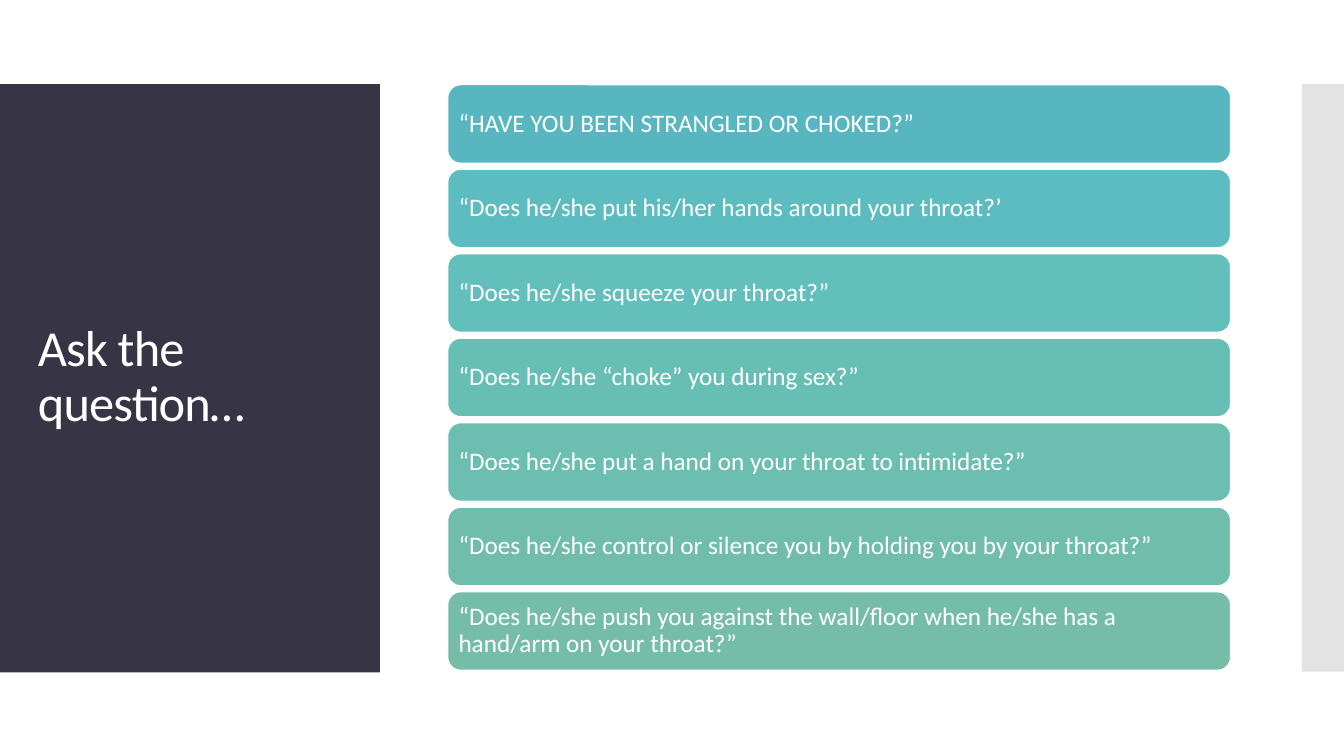
import pptx
import pptx.util
import pptx.dml.color
import pptx.enum.shapes
import pptx.enum.text
import pptx.oxml
import pptx.oxml.ns

Pt = pptx.util.Pt
SHAPES = pptx.enum.shapes.MSO_SHAPE

TITLE = "Ask the question…"
QUESTIONS = [
    ("“HAVE YOU BEEN STRANGLED OR CHOKED?”", "58B6C0"),
    ("“Does he/she put his/her hands around your throat?’", "5DBCBF"),
    ("“Does he/she squeeze your throat?”", "62BFBB"),
    ("“Does he/she “choke” you during sex?”", "67BEB5"),
    ("“Does he/she put a hand on your throat to intimidate?”", "6CBEB0"),
    ("“Does he/she control or silence you by holding you by your throat?”", "70BDAB"),
    ("“Does he/she push you against the wall/floor when he/she has a "
     "hand/arm on your throat?”", "75BDA7"),
]
WIDTH, HEIGHT = 960, 540
PANEL_TOP, PANEL_WIDTH, PANEL_HEIGHT = 60, 271.3, 420.3
STRIP_LEFT, STRIP_HEIGHT = 930, 419.8
BAR_LEFT, BAR_TOP, BAR_WIDTH, BAR_HEIGHT = 319.8, 60.5, 559.2, 56.1
BAR_PITCH = 60.36


def color(value):
    return pptx.dml.color.RGBColor.from_string(value)


def add_block(slide, kind, left, top, width, height, fill, line=None, alpha=None):
    s = slide.shapes.add_shape(kind, Pt(left), Pt(top), Pt(width), Pt(height))
    s.shadow.inherit = False
    s.fill.solid()
    s.fill.fore_color.rgb = color(fill)
    if line:
        s.line.color.rgb = color(line)
        s.line.width = Pt(0.85)
    else:
        s.line.fill.background()
    if alpha:
        clr = s.fill._xPr.find(".//" + pptx.oxml.ns.qn("a:srgbClr"))
        node = pptx.oxml.parse_xml(
            f'<a:alpha {pptx.oxml.ns.nsdecls("a")} val="{alpha * 1000}"/>')
        clr.append(node)
    return s


def write(s, text, size=18, inset_x=5, inset_y=5, spacing=None):
    tf = s.text_frame
    tf.word_wrap = True
    tf.vertical_anchor = pptx.enum.text.MSO_ANCHOR.MIDDLE
    tf.margin_left = tf.margin_right = Pt(inset_x)
    tf.margin_top = tf.margin_bottom = Pt(inset_y)
    p = tf.paragraphs[0]
    p.alignment = pptx.enum.text.PP_ALIGN.LEFT
    p.line_spacing = 0.9
    r = p.add_run()
    r.text = text
    r.font.size = Pt(size)
    r.font.name = "Calibri"
    r.font.color.rgb = color("FFFFFF")
    if spacing:
        r.font._element.set("spc", str(round(spacing * 100)))


def main():
    prs = pptx.Presentation()
    prs.slide_width, prs.slide_height = Pt(WIDTH), Pt(HEIGHT)
    slide = prs.slides.add_slide(prs.slide_layouts[6])

    add_block(slide, SHAPES.RECTANGLE, STRIP_LEFT, PANEL_TOP,
              WIDTH - STRIP_LEFT, STRIP_HEIGHT, "C8C8C8", alpha=50)
    add_block(slide, SHAPES.RECTANGLE, 0, PANEL_TOP, PANEL_WIDTH, PANEL_HEIGHT, "373545")
    title = slide.shapes.add_textbox(Pt(20), Pt(88.6), Pt(231.8), Pt(362.2))
    write(title, TITLE, size=36, inset_x=7.2, inset_y=3.6, spacing=-0.6)

    for i, (question, fill) in enumerate(QUESTIONS):
        bar = add_block(slide, SHAPES.ROUNDED_RECTANGLE, BAR_LEFT, BAR_TOP + i * BAR_PITCH,
                        BAR_WIDTH, BAR_HEIGHT, fill, line="FFFFFF")
        write(bar, question)

    prs.save("out.pptx")


if __name__ == "__main__":
    main()
